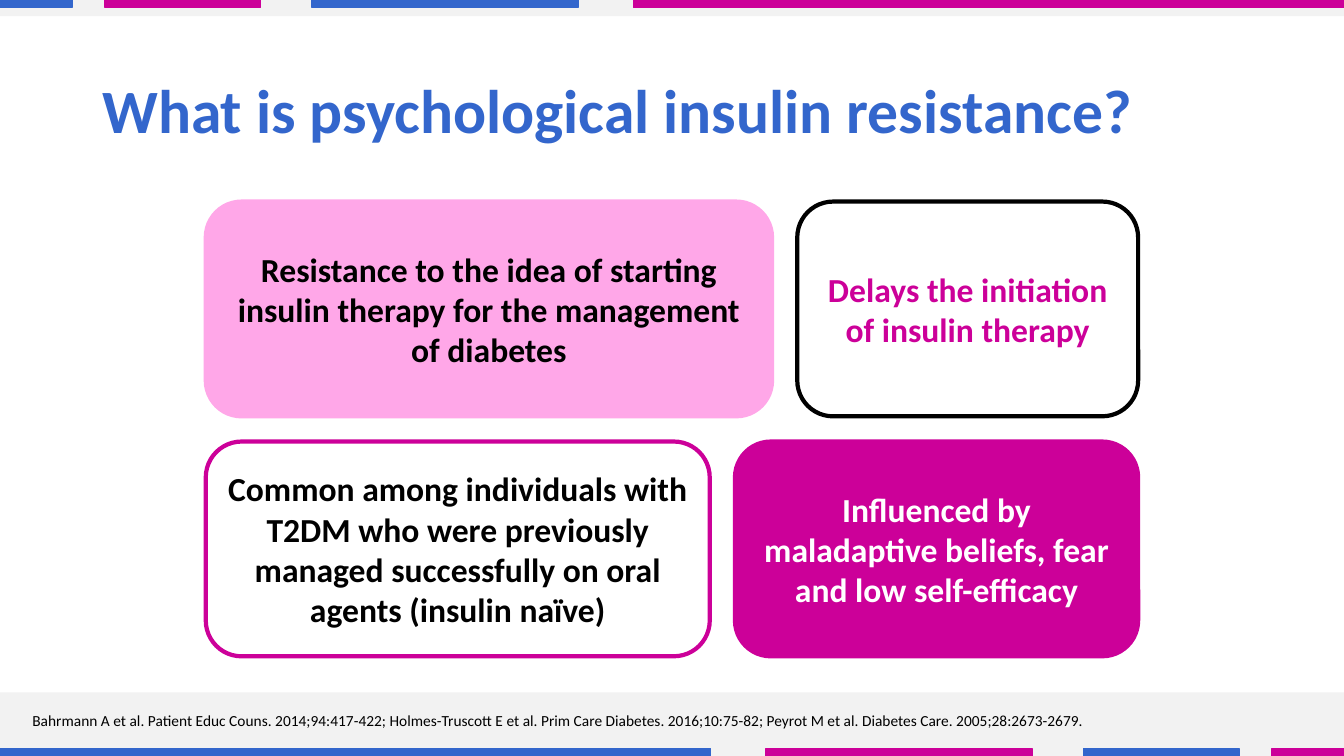
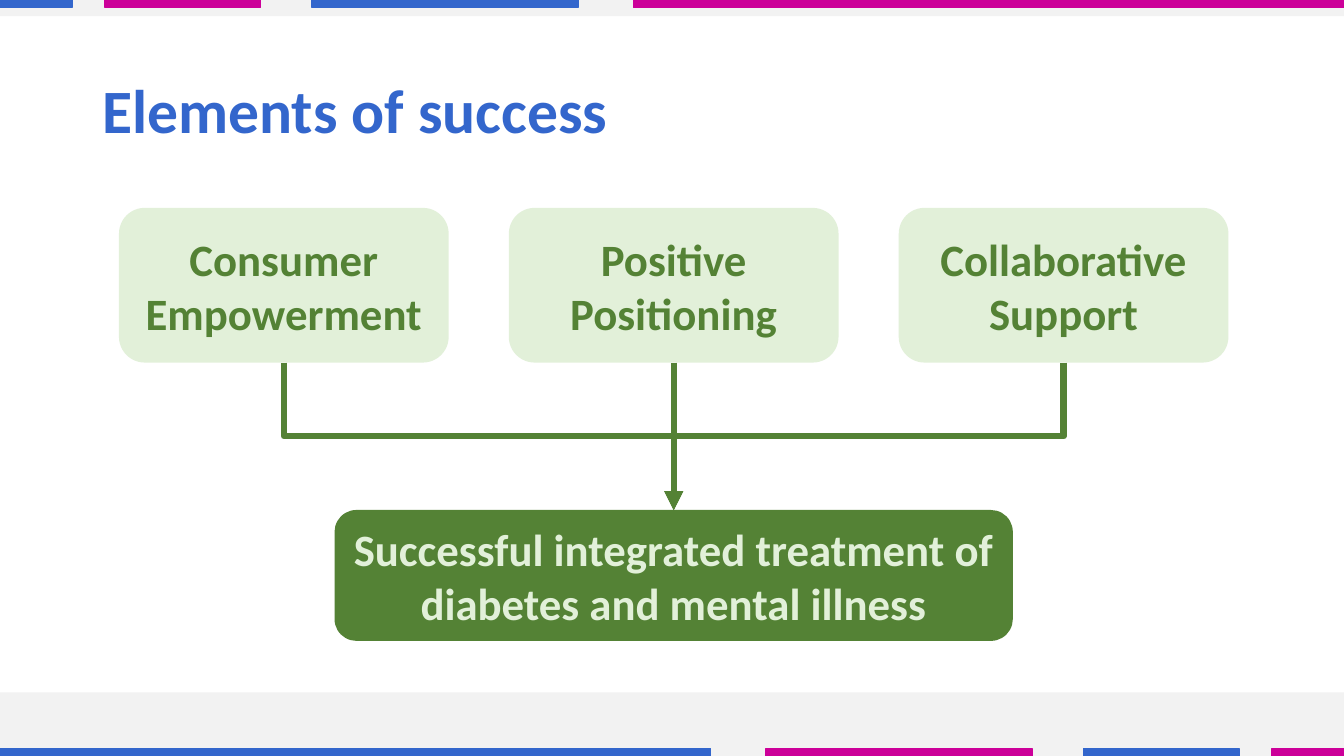
"""Build two slides on psychological insulin resistance and elements of success."""
import pptx
import pptx.dml.color
import pptx.enum.shapes
import pptx.enum.text
import pptx.oxml.ns
import pptx.util
from lxml import etree

Pt = pptx.util.Pt
qn = pptx.oxml.ns.qn
PRESET = pptx.enum.shapes.MSO_SHAPE
CONNECTOR = pptx.enum.shapes.MSO_CONNECTOR
ALIGN = pptx.enum.text.PP_ALIGN

COLORS = {
    "blue": "3366CC",
    "magenta": "CC0099",
    "pink": "FFA7E8",
    "grey": "F2F2F2",
    "black": "000000",
    "white": "FFFFFF",
    "green": "548235",
    "mint": "E2F0D9",
}
FONT = "Calibri"
SLIDE_WIDTH, SLIDE_HEIGHT = 960, 540
FOOTER_TOP = 494.6
HEADER_HEIGHT = 11.5
STRIPE_HEIGHT = 5.5
STRIPES = [(0, 507.6), (547.2, 190), (774, 111), (908.6, 51.4)]
GAP = 18


def rgb(color):
    return pptx.dml.color.RGBColor.from_string(COLORS[color])


def apply_format(target, values):
    for name, value in values.items():
        setattr(target, name, value)


def write(holder, paragraphs, size, color, bold=True, align=ALIGN.CENTER, spacing=1.0, wrap=True):
    frame = holder.text_frame
    apply_format(frame, {"word_wrap": wrap, "vertical_anchor": pptx.enum.text.MSO_ANCHOR.MIDDLE})
    for index, wording in enumerate(paragraphs):
        paragraph = frame.add_paragraph() if index else frame.paragraphs[0]
        apply_format(paragraph, {"alignment": align, "line_spacing": spacing})
        run = paragraph.add_run()
        run.text = wording
        apply_format(run.font, {"name": FONT, "size": Pt(size), "bold": bold})
        run.font.color.rgb = rgb(color)


def add_panel(slide, box, fill=None, outline=None, weight=1, preset=PRESET.RECTANGLE):
    panel = slide.shapes.add_shape(preset, *map(Pt, box))
    panel.shadow.inherit = False
    if fill:
        panel.fill.solid()
        panel.fill.fore_color.rgb = rgb(fill)
    else:
        panel.fill.background()
    if outline:
        panel.line.color.rgb = rgb(outline)
        panel.line.width = Pt(weight)
    else:
        panel.line.fill.background()
    return panel


def add_card(slide, box, paragraphs, size, color, fill=None, outline=None, wrap=True):
    card = add_panel(slide, box, fill, outline, 3, PRESET.ROUNDED_RECTANGLE)
    write(card, paragraphs, size, color, wrap=wrap)
    return card


def add_label(slide, box, wording, size, color, bold, spacing=1.0):
    label = slide.shapes.add_textbox(*map(Pt, box))
    write(label, [wording], size, color, bold, ALIGN.LEFT, spacing)


def add_bands(slide):
    add_panel(slide, (0, FOOTER_TOP, SLIDE_WIDTH, SLIDE_HEIGHT - FOOTER_TOP), "grey")
    add_panel(slide, (0, 0, SLIDE_WIDTH, HEADER_HEIGHT), "grey")
    for index, (left, width) in enumerate(STRIPES):
        lower, upper = ("magenta", "blue") if index % 2 else ("blue", "magenta")
        mirrored = SLIDE_WIDTH - left - width
        add_panel(slide, (left, SLIDE_HEIGHT - STRIPE_HEIGHT, width, STRIPE_HEIGHT), lower, lower)
        add_panel(slide, (mirrored, 0, width, STRIPE_HEIGHT), upper, upper)


def add_titled_slide(deck, title):
    slide = deck.slides.add_slide(deck.slide_layouts[6])
    add_bands(slide)
    add_label(slide, (66, 28.8, 828, 104.4), title, 44, "blue", True, 0.9)
    return slide


def turn_downward(arrow):
    across, down = arrow.end_x - arrow.begin_x, arrow.end_y - arrow.begin_y
    center_x = (arrow.begin_x + arrow.end_x) // 2
    center_y = (arrow.begin_y + arrow.end_y) // 2
    apply_format(arrow, {
        "left": center_x - down // 2,
        "top": center_y - abs(across) // 2,
        "width": down,
        "height": abs(across),
    })
    frame = arrow.element.spPr.find(qn("a:xfrm"))
    frame.set("rot", str((270 if across > 0 else 90) * 60000))
    frame.set("flipH", "1" if across > 0 else "0")


def add_arrow(slide, source, target, kind):
    arrow = slide.shapes.add_connector(kind, 0, 0, 0, 0)
    arrow.begin_connect(source, 2)
    arrow.end_connect(target, 0)
    if kind == CONNECTOR.ELBOW:
        turn_downward(arrow)
    arrow.line.color.rgb = rgb("green")
    arrow.line.width = Pt(4.5)
    properties = arrow.element.spPr
    etree.SubElement(properties.find(qn("a:ln")), qn("a:tailEnd"), type="triangle")
    etree.SubElement(properties, qn("a:effectLst"))


def build_definition(deck):
    slide = add_titled_slide(deck, "What is psychological insulin resistance?")
    add_label(
        slide, (16, 500.4, 926, 28.8),
        "Bahrmann A et al. Patient Educ Couns. 2014;94:417-422; "
        "Holmes-Truscott E et al. Prim Care Diabetes. 2016;10:75-82; "
        "Peyrot M et al. Diabetes Care. 2005;28:2673-2679.",
        11, "black", False,
    )
    rows = [
        [(404.5, "Resistance to the idea of starting insulin therapy for the management of diabetes",
          "black", "pink", "pink"),
         (243.5, "Delays the initiation of insulin therapy", "magenta", None, "black")],
        [(360, "Common among individuals with T2DM who were previously managed successfully "
               "on oral agents (insulin naïve)", "black", None, "magenta"),
         (288, "Influenced by maladaptive beliefs, fear and low self-efficacy",
          "white", "magenta", "magenta")],
    ]
    height = 153.4
    for index, row in enumerate(rows):
        left = 147
        for width, wording, color, fill, outline in row:
            box = (left, 144 + index * (height + GAP), width, height)
            add_card(slide, box, [wording], 24, color, fill, outline)
            left += width + GAP


def build_success(deck):
    slide = add_titled_slide(deck, "Elements of success")
    elements = [
        add_card(slide, (85 + index * 278.5, 148.5, 235.5, 110.5), [wording], 32, "green", "mint")
        for index, wording in enumerate(
            ["Consumer Empowerment", "Positive Positioning", "Collaborative Support"])
    ]
    outcome = add_card(
        slide, (239, 364.3, 484.5, 93.5),
        ["Successful integrated treatment of", "diabetes and mental illness"],
        32, "mint", "green", wrap=False,
    )
    for element, kind in zip(elements, [CONNECTOR.ELBOW, CONNECTOR.STRAIGHT, CONNECTOR.ELBOW]):
        add_arrow(slide, element, outcome, kind)


def main():
    deck = pptx.Presentation()
    apply_format(deck, {"slide_width": Pt(SLIDE_WIDTH), "slide_height": Pt(SLIDE_HEIGHT)})
    build_definition(deck)
    build_success(deck)
    deck.save("out.pptx")


if __name__ == "__main__":
    main()
